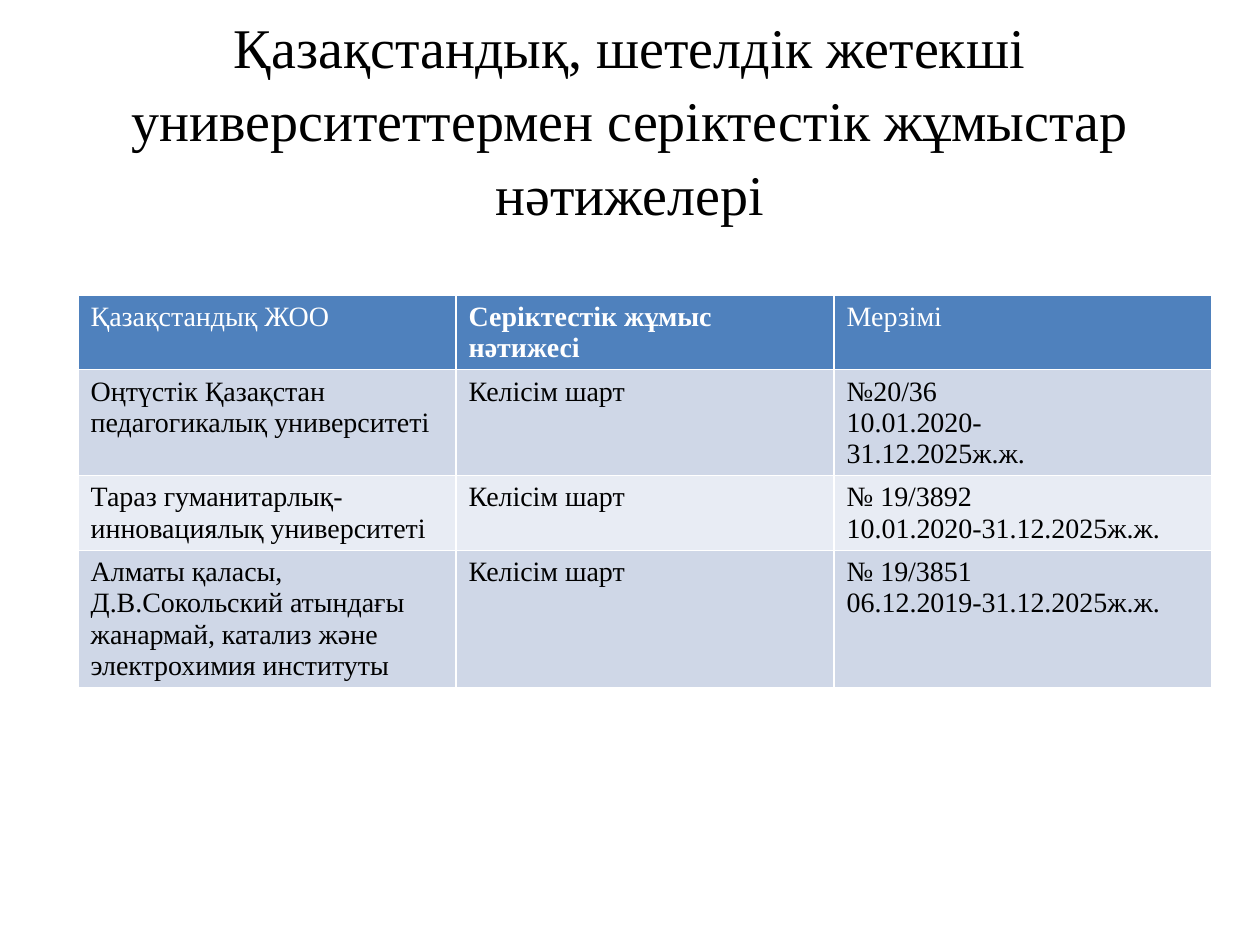
from pptx import Presentation
from pptx import util as u
from pptx.dml import color
from pptx.enum import text

THEME = {
    "font": "Times New Roman",
    "title": 32, "cell": 16,
    "ink": "000000", "paper": "FFFFFF",
    "head": "4F81BD", "bands": ("CFD7E7", "E8ECF4"),
}
ROWS = [
    ["Қазақстандық ЖОО", "Серіктестік жұмыс нәтижесі", "Мерзімі"],
    ["Оңтүстік Қазақстан педагогикалық университеті", "Келісім шарт",
     "№20/36\n10.01.2020-\n31.12.2025ж.ж."],
    ["Тараз гуманитарлық-инновациялық университеті", "Келісім шарт",
     "№ 19/3892\n10.01.2020-31.12.2025ж.ж."],
    ["Алматы қаласы, Д.В.Сокольский атындағы жанармай, катализ және электрохимия институты",
     "Келісім шарт", "№ 19/3851\n06.12.2019-31.12.2025ж.ж."],
]


def write(tf, content, size, ink=THEME["ink"], bold=False, align=None, spacing=None):
    tf.text = content
    for p in tf.paragraphs:
        p.alignment, p.line_spacing = align, spacing
        for r in p.runs:
            r.font.name, r.font.size, r.font.bold = THEME["font"], u.Pt(size), bold
            r.font.color.rgb = color.RGBColor.from_string(ink)


prs = Presentation()
prs.slide_width, prs.slide_height = u.Inches(10), u.Inches(7.5)
W, H = prs.slide_width, prs.slide_height
s = prs.slides.add_slide(prs.slide_layouts[5])

sp = s.shapes.title
sp.left, sp.top, sp.width, sp.height = int(W * 0.05), int(H * 0.04), int(W * 0.9), int(H / 6)
sp.text_frame.vertical_anchor = text.MSO_ANCHOR.MIDDLE
write(sp.text_frame, "Қазақстандық, шетелдік жетекші университеттермен серіктестік жұмыстар нәтижелері",
      THEME["title"], align=text.PP_ALIGN.CENTER, spacing=1.09)

row_h = u.Inches(0.41)
tbl = s.shapes.add_table(len(ROWS), len(ROWS[0]), u.Inches(0.62), u.Inches(2.34),
                         int(W * 0.9), row_h * len(ROWS)).table
for i, row in enumerate(ROWS):
    tbl.rows[i].height = row_h
    fill = THEME["bands"][(i - 1) % 2] if i else THEME["head"]
    ink = THEME["ink"] if i else THEME["paper"]
    for j, content in enumerate(row):
        cell = tbl.cell(i, j)
        cell.fill.solid()
        cell.fill.fore_color.rgb = color.RGBColor.from_string(fill)
        write(cell.text_frame, content, THEME["cell"], ink=ink, bold=(i, j) == (0, 1))

prs.save("out.pptx")
